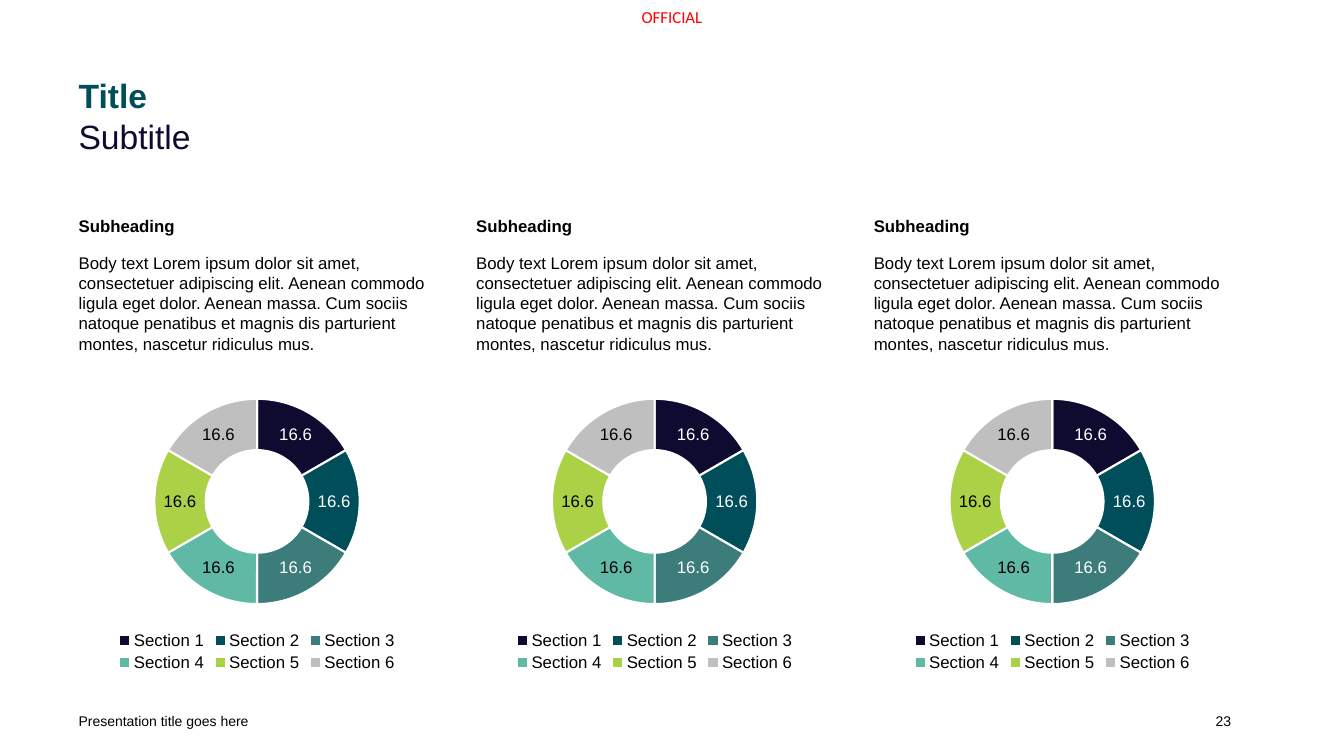
from dataclasses import dataclass

from lxml import etree
from pptx import Presentation
from pptx.chart.data import CategoryChartData
from pptx.dml.color import RGBColor
from pptx.enum.chart import XL_CHART_TYPE, XL_LEGEND_POSITION
from pptx.enum.text import MSO_ANCHOR, PP_ALIGN
from pptx.oxml.ns import qn
from pptx.util import Inches, Pt

DOUGHNUT = XL_CHART_TYPE.DOUGHNUT
BOTTOM = XL_LEGEND_POSITION.BOTTOM
TOP, MIDDLE = MSO_ANCHOR.TOP, MSO_ANCHOR.MIDDLE
LEFT, CENTER, RIGHT = PP_ALIGN.LEFT, PP_ALIGN.CENTER, PP_ALIGN.RIGHT


@dataclass(frozen=True)
class Theme:
    """Colours, fonts and type sizes of the deck."""
    text: str = "000000"
    light: str = "FFFFFF"
    title: str = "004E5A"
    subtitle: str = "0F0A30"
    marking: str = "FF0000"
    sections: tuple = ("0F0A30", "004E5A", "3C7C7B", "60B9A5", "ABD147", "BFBFBF")
    font: str = "Arial"
    marking_font: str = "Calibri"
    heading_size: int = 24
    body_size: int = 12
    footer_size: int = 10


THEME = Theme()
PAGE_WIDTH, PAGE_HEIGHT = 13.33, 7.5
MARGIN, CONTENT_WIDTH = 0.78, 11.43
COLUMN_COUNT, COLUMN_GAP = 3, 0.4
COLUMN_WIDTH = (CONTENT_WIDTH - (COLUMN_COUNT - 1) * COLUMN_GAP) / COLUMN_COUNT
COLUMN_TOP, COLUMN_HEIGHT = 2.14, 4.56
CHART_OFFSET = 1.61
PLOT_LAYOUT = {"x": 0.212, "y": 0.039, "w": 0.575, "h": 0.753}
SECTION_VALUE = 16.6
DARK_SECTIONS = 3
BODY = (
    "Body text Lorem ipsum dolor sit amet, consectetuer adipiscing elit. "
    "Aenean commodo ligula eget dolor. Aenean massa. Cum sociis natoque penatibus "
    "et magnis dis parturient montes, nascetur ridiculus mus."
)


def set_font(font, color=THEME.text, **formats):
    """Apply the theme font, a colour and any other font values."""
    values = {"name": THEME.font, "size": Pt(THEME.body_size), **formats}
    for name, value in values.items():
        setattr(font, name, value)
    font.color.rgb = RGBColor.from_string(color)


def add_text(page, box, paras, anchor=TOP):
    """Place paragraphs of (text, paragraph formats, font formats) in a box."""
    frame = page.shapes.add_textbox(*map(Inches, box)).text_frame
    frame.word_wrap = True
    frame.vertical_anchor = anchor
    for side in ("left", "top", "right", "bottom"):
        setattr(frame, f"margin_{side}", 0)
    for index, (text, formats, font) in enumerate(paras):
        para = frame.add_paragraph() if index else frame.paragraphs[0]
        for name, value in formats.items():
            setattr(para, name, value)
        span = para.add_run()
        span.text = text
        set_font(span.font, **font)


def set_plot_layout(chart):
    """Fix the inner plot area as shares of the chart."""
    plot_area = chart.plots[0]._element.getparent()
    layout = plot_area.find(qn("c:layout"))
    if layout is None:
        layout = etree.Element(qn("c:layout"))
        plot_area.insert(0, layout)
    manual = etree.SubElement(layout, qn("c:manualLayout"))
    values = {"layoutTarget": "inner", "xMode": "edge", "yMode": "edge", **PLOT_LAYOUT}
    for name, value in values.items():
        etree.SubElement(manual, qn(f"c:{name}")).set("val", str(value))


def add_doughnut(page, box):
    """Draw the six-section doughnut with its legend."""
    data = CategoryChartData()
    count = len(THEME.sections)
    data.categories = [f"Section {number}" for number in range(1, count + 1)]
    data.add_series("Series 1", [SECTION_VALUE] * count)
    chart = page.shapes.add_chart(DOUGHNUT, *map(Inches, box), data).chart
    set_font(chart.font)
    chart.has_title = False
    chart.has_legend = True
    chart.legend.position = BOTTOM
    chart.legend.include_in_layout = False
    set_font(chart.legend.font)
    plot = chart.plots[0]
    plot.vary_by_categories = True
    series = plot.series[0]
    series.data_labels.show_value = True
    series.data_labels.show_percentage = False
    set_font(series.data_labels.font, THEME.light)
    for index, color in enumerate(THEME.sections):
        point = series.points[index]
        point.format.fill.solid()
        point.format.fill.fore_color.rgb = RGBColor.from_string(color)
        point.format.line.color.rgb = RGBColor.from_string(THEME.light)
        point.format.line.width = Pt(1.5)
        if index >= DARK_SECTIONS:
            set_font(point.data_label.font)
    set_plot_layout(chart)


def add_column(page, box):
    """Place a subheading, its body text and a doughnut in a column."""
    left, top, width, height = box
    add_text(page, (left, top, width, CHART_OFFSET), [
        ("Subheading", {"space_after": Pt(12)}, {"bold": True}),
        (BODY, {"space_after": Pt(6)}, {}),
    ])
    add_doughnut(page, (left, top + CHART_OFFSET, width, height - CHART_OFFSET))


def add_header(page, box):
    """Place the title over the subtitle."""
    left, top, width, height = box
    size = Pt(THEME.heading_size)
    row = height / 2
    add_text(page, (left, top, width, row), [
        ("Title", {"line_spacing": 0.9}, {"size": size, "color": THEME.title, "bold": True}),
    ])
    add_text(page, (left, top + row, width, row), [
        ("Subtitle", {}, {"size": size, "color": THEME.subtitle}),
    ])


def add_marking(page, box):
    """Place the centred marking at the top of the page."""
    font = {"name": THEME.marking_font, "color": THEME.marking}
    add_text(page, box, [("OFFICIAL", {"alignment": CENTER}, font)])


def add_footer(page, box):
    """Place the presentation title and page number at the two ends."""
    left, top, width, height = box
    half = width / 2
    entries = (("Presentation title goes here", LEFT), ("23", RIGHT))
    for index, (text, alignment) in enumerate(entries):
        add_text(page, (left + index * half, top, half, height), [
            (text, {"alignment": alignment}, {"size": Pt(THEME.footer_size)}),
        ], MIDDLE)


def build_chart_page(deck):
    """Build the page of three text and chart columns."""
    page = deck.slides.add_slide(deck.slide_layouts[6])
    add_marking(page, (MARGIN, 0.07, PAGE_WIDTH - 2 * MARGIN, 0.2))
    add_header(page, (MARGIN, 0.79, CONTENT_WIDTH, 0.72))
    for index in range(COLUMN_COUNT):
        left = MARGIN + index * (COLUMN_WIDTH + COLUMN_GAP)
        add_column(page, (left, COLUMN_TOP, COLUMN_WIDTH, COLUMN_HEIGHT))
    add_footer(page, (MARGIN, 6.95, CONTENT_WIDTH, 0.4))


def main():
    """Create and save the deck."""
    deck = Presentation()
    deck.slide_width, deck.slide_height = Inches(PAGE_WIDTH), Inches(PAGE_HEIGHT)
    build_chart_page(deck)
    deck.save("out.pptx")


if __name__ == "__main__":
    main()
